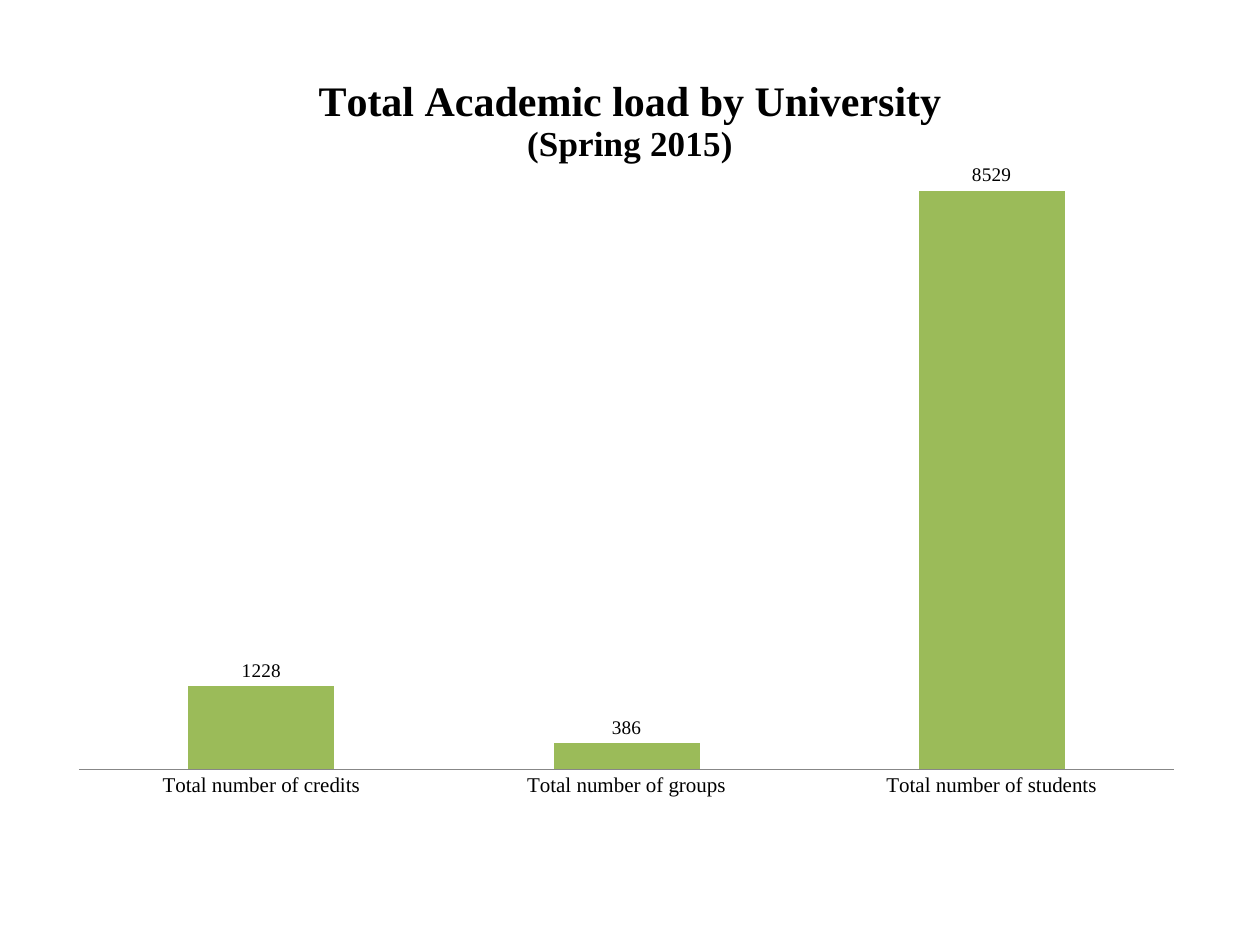
"""Build a slide with a column chart of the total academic load."""
from lxml import etree
from pptx import Presentation
from pptx.chart.data import CategoryChartData
from pptx.dml.color import RGBColor
from pptx.enum.chart import XL_CHART_TYPE, XL_LABEL_POSITION, XL_TICK_MARK
from pptx.oxml.ns import qn
from pptx.util import Inches, Pt

COLUMN = XL_CHART_TYPE.COLUMN_CLUSTERED
ABOVE = XL_LABEL_POSITION.OUTSIDE_END
NO_TICK = XL_TICK_MARK.NONE
FACE = "Times New Roman"
COLORS = {"text": "000000", "bar": "9BBB59", "axis": "878787"}


def style(font, size, bold=False):
    font.name = FACE
    font.size = Pt(size)
    font.bold = bold
    font.color.rgb = RGBColor.from_string(COLORS["text"])


deck = Presentation()
deck.slide_width = Inches(10)
deck.slide_height = Inches(7.5)
slide = deck.slides.add_slide(deck.slide_layouts[6])

data = CategoryChartData()
data.categories = [f"Total number of {noun}" for noun in ("credits", "groups", "students")]
data.add_series("Load", (1228, 386, 8529))
frame = slide.shapes.add_chart(
    COLUMN, Inches(0.5), Inches(0.39), Inches(9), Inches(6.31), data
)
chart = frame.chart
chart.has_legend = False
chart.font.name = "Calibri"
chart.font.size = Pt(10)

chart.has_title = True
title = chart.chart_title
title.include_in_layout = False
title.text_frame.text = "Total Academic load by University\n(Spring 2015)"
for line, size in zip(title.text_frame.paragraphs, (24, 20)):
    style(line.font, size, True)
    style(line.runs[0].font, size, True)

values = chart.value_axis
values.visible = False
values.has_major_gridlines = False
values.minimum_scale = 0
values.maximum_scale = 9000

names = chart.category_axis
names.major_tick_mark = NO_TICK
names.minor_tick_mark = NO_TICK
names.format.line.color.rgb = RGBColor.from_string(COLORS["axis"])
names.format.line.width = Pt(0.75)
style(names.tick_labels.font, 12)

plot = chart.plots[0]
plot.gap_width = 150
plot.overlap = -25
plot.vary_by_categories = False
bars = plot.series[0]
bars.format.fill.solid()
bars.format.fill.fore_color.rgb = RGBColor.from_string(COLORS["bar"])
labels = bars.data_labels
labels.show_value = True
labels.position = ABOVE
style(labels.font, 11)

area = chart.element.find(".//" + qn("c:plotArea"))
layout = area.find(qn("c:layout"))
if layout is None:
    layout = etree.Element(qn("c:layout"))
    area.insert(0, layout)
manual = etree.SubElement(layout, qn("c:manualLayout"))
rules = {
    "layoutTarget": "inner", "xMode": "edge", "yMode": "edge",
    "x": "0.014", "y": "0.138", "w": "0.966", "h": "0.768",
}
for tag, val in rules.items():
    etree.SubElement(manual, qn(f"c:{tag}")).set("val", val)

deck.save("out.pptx")
